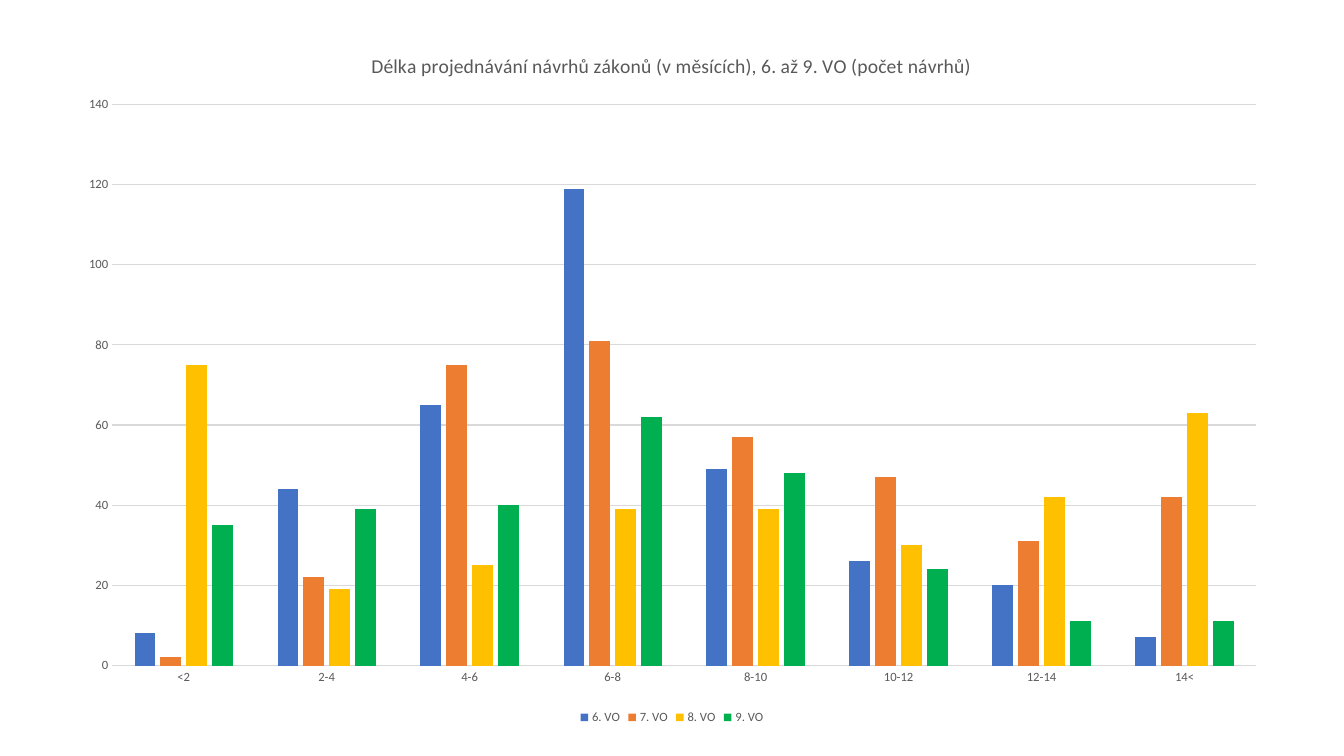
from lxml import etree
from pptx import Presentation
from pptx import util as u
from pptx.chart.data import CategoryChartData
from pptx.dml.color import RGBColor
from pptx.enum import chart as ch
from pptx.oxml.ns import qn

WIDTH, HEIGHT = u.Inches(13.33), u.Inches(7.5)
FONT, GREY, PALE = "Calibri", "595959", "D9D9D9"
HEADING = "Délka projednávání návrhů zákonů (v měsících), 6. až 9. VO (počet návrhů)"
MONTHS = ["<2", "2-4", "4-6", "6-8", "8-10", "10-12", "12-14", "14<"]
TERMS = [
    ("6. VO", "4472C4", (8, 44, 65, 119, 49, 26, 20, 7)),
    ("7. VO", "ED7D31", (2, 22, 75, 81, 57, 47, 31, 42)),
    ("8. VO", "FFC000", (75, 19, 25, 39, 39, 30, 42, 63)),
    ("9. VO", "00B050", (35, 39, 40, 62, 48, 24, 11, 11)),
]


def paint(color_format, color):
    """Set a colour from a hex string."""
    color_format.rgb = RGBColor.from_string(color)


def style_font(font, size, color=GREY):
    """Set typeface, size and colour."""
    font.name, font.size, font.bold = FONT, u.Pt(size), False
    paint(font.color, color)


def style_line(line):
    """Draw a thin pale line."""
    line.width = u.Pt(0.75)
    paint(line.color, PALE)


def place(part, index, **shares):
    """Place a chart part by shares of the chart's size."""
    for old in part.findall(qn("c:layout")):
        part.remove(old)
    layout = etree.Element(qn("c:layout"))
    part.insert(index, layout)
    manual = etree.SubElement(layout, qn("c:manualLayout"))
    settings = {"xMode": "edge", "yMode": "edge", **shares}
    if "w" in shares:
        settings = {"layoutTarget": "inner", **settings}
    for name, value in settings.items():
        etree.SubElement(manual, qn(f"c:{name}")).set("val", str(value))


def add_terms_chart(slide):
    """Add the clustered columns, one series per electoral term."""
    counts = CategoryChartData()
    counts.categories = MONTHS
    for name, _, values in TERMS:
        counts.add_series(name, values)
    chart = slide.shapes.add_chart(
        ch.XL_CHART_TYPE.COLUMN_CLUSTERED, u.Inches(0.63), u.Inches(0.27),
        u.Inches(12.07), u.Inches(6.96), counts).chart
    style_font(chart.font, 10, "000000")
    columns = chart.plots[0]
    columns.gap_width, columns.overlap = 219, -27
    columns.vary_by_categories = False
    for series, (_, color, _) in zip(columns.series, TERMS):
        series.format.fill.solid()
        paint(series.format.fill.fore_color, color)
        series.invert_if_negative = False
    place(chart.element.find(".//" + qn("c:plotArea")), 0,
          x=0.04, y=0.11, w=0.94, h=0.8)
    return chart


def format_axes(chart):
    """Format the month and count axes."""
    months, counts = chart.category_axis, chart.value_axis
    for axis in (months, counts):
        axis.major_tick_mark = axis.minor_tick_mark = ch.XL_TICK_MARK.NONE
        style_font(axis.tick_labels.font, 9)
    style_line(months.format.line)
    counts.format.line.fill.background()
    counts.minimum_scale, counts.maximum_scale, counts.major_unit = 0, 140, 20
    counts.has_major_gridlines = True
    style_line(counts.major_gridlines.format.line)


def add_heading(chart):
    """Add the chart title."""
    chart.has_title = True
    heading = chart.chart_title.text_frame.paragraphs[0].add_run()
    heading.text = HEADING
    style_font(heading.font, 14)
    place(chart.element.find(".//" + qn("c:title")), 1, x=0.25, y=0.03)


def add_legend(chart):
    """Add the legend of terms below the columns."""
    chart.has_legend = True
    chart.legend.position = ch.XL_LEGEND_POSITION.BOTTOM
    chart.legend.include_in_layout = False
    style_font(chart.legend.font, 9)


def main():
    """Build and save the slide."""
    deck = Presentation()
    deck.slide_width, deck.slide_height = WIDTH, HEIGHT
    slide = deck.slides.add_slide(deck.slide_layouts[6])
    chart = add_terms_chart(slide)
    format_axes(chart)
    add_heading(chart)
    add_legend(chart)
    deck.save("out.pptx")


if __name__ == "__main__":
    main()
